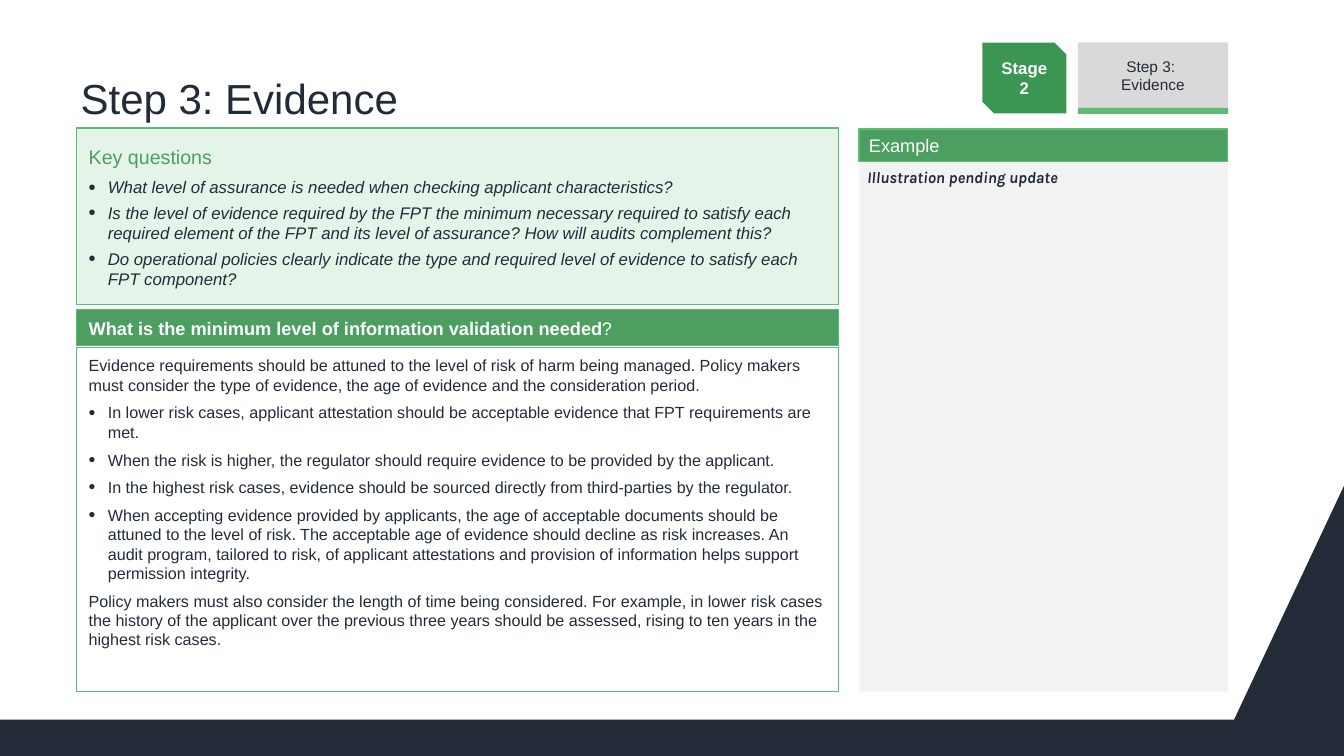
from dataclasses import dataclass

import pptx
import pptx.dml.color
import pptx.enum.shapes
import pptx.enum.text
import pptx.util
from lxml import etree
from pptx.util import Inches

SHAPE = pptx.enum.shapes.MSO_SHAPE
ALIGN = pptx.enum.text.PP_ALIGN
ANCHOR = pptx.enum.text.MSO_ANCHOR
NS = "http://schemas.openxmlformats.org/drawingml/2006/main"


@dataclass(frozen=True)
class Theme:
    navy: str = "232B39"
    white: str = "FFFFFF"
    green: str = "4C9E61"
    deep: str = "3C9653"
    bright: str = "5BBD74"
    mint: str = "E5F4E9"
    pale: str = "F2F2F2"
    gray: str = "D9D9D9"
    font: str = "Arial"
    accent: str = "Karla"
    title: float = 30
    head: float = 14
    bar: float = 13
    quest: float = 12
    body: float = 11.5
    tag: float = 11


THEME = Theme()
LEFT, WIDE = 0.76, 7.56
SIDE, SLIM = 8.52, 3.66
PAD = (0.12, 0.08, 0.12, 0.08)

ASKS = [
    "What level of assurance is needed when checking applicant characteristics?",
    "Is the level of evidence required by the FPT the minimum necessary required to satisfy each "
    "required element of the FPT and its level of assurance? How will audits complement this?",
    "Do operational policies clearly indicate the type and required level of evidence to satisfy "
    "each FPT component?",
]
INTRO = (
    "Evidence requirements should be attuned to the level of risk of harm being managed. Policy "
    "makers must consider the type of evidence, the age of evidence and the consideration period."
)
RULES = [
    "In lower risk cases, applicant attestation should be acceptable evidence that FPT "
    "requirements are met.",
    "When the risk is higher, the regulator should require evidence to be provided by the "
    "applicant.",
    "In the highest risk cases, evidence should be sourced directly from third-parties by the "
    "regulator.",
    "When accepting evidence provided by applicants, the age of acceptable documents should be "
    "attuned to the level of risk. The acceptable age of evidence should decline as risk "
    "increases. An audit program, tailored to risk, of applicant attestations and provision of "
    "information helps support permission integrity.",
]
CLOSE = (
    "Policy makers must also consider the length of time being considered. For example, in lower "
    "risk cases the history of the applicant over the previous three years should be assessed, "
    "rising to ten years in the highest risk cases."
)


def tint(code):
    return pptx.dml.color.RGBColor.from_string(code)


def paint(shape, fill, line=None, width=1):
    shape.shadow.inherit = False
    shape.fill.solid()
    shape.fill.fore_color.rgb = tint(fill)
    if line:
        shape.line.color.rgb = tint(line)
        shape.line.width = pptx.util.Pt(width)
    else:
        shape.line.fill.background()


def frame(shape, pad, anchor):
    text = shape.text_frame
    text.word_wrap = True
    text.auto_size = pptx.enum.text.MSO_AUTO_SIZE.NONE
    text.vertical_anchor = anchor
    text.margin_left, text.margin_top, text.margin_right, text.margin_bottom = map(Inches, pad)


def box(slide, place, fill, line=None, width=1, kind=SHAPE.RECTANGLE,
        pad=(0.1, 0.05, 0.1, 0.05), anchor=ANCHOR.MIDDLE):
    shape = slide.shapes.add_shape(kind, *map(Inches, place))
    paint(shape, fill, line, width)
    frame(shape, pad, anchor)
    return shape


def bullet(para):
    props = para._p.get_or_add_pPr()
    props.set("marL", str(Inches(0.19)))
    props.set("indent", str(-Inches(0.19)))
    etree.SubElement(props, f"{{{NS}}}buSzPct", val="120000")
    etree.SubElement(props, f"{{{NS}}}buFont", typeface=THEME.font)
    etree.SubElement(props, f"{{{NS}}}buChar", char="•")


def write(shape, text, size, color, bold=None, slant=None, align=ALIGN.LEFT,
          after=0, lead=None, dot=False, face=THEME.font):
    body = shape.text_frame
    para = body.add_paragraph() if body.text else body.paragraphs[0]
    para.text = text
    if dot:
        bullet(para)
    para.alignment = align
    para.space_after = pptx.util.Pt(after)
    para.line_spacing = lead
    font = para.font
    font.name, font.size = face, pptx.util.Pt(size)
    font.bold, font.italic = bold, slant
    font.color.rgb = tint(color)
    return para


def title(slide):
    shape = slide.shapes.title
    shape.left, shape.top = Inches(LEFT), Inches(0.15)
    shape.width, shape.height = Inches(11.43), Inches(1.13)
    frame(shape, (0.04, 0.05, 0.04, 0.05), ANCHOR.BOTTOM)
    write(shape, "Step 3: Evidence", THEME.title, THEME.navy, lead=0.9)


def footer(slide):
    edge = [(0, 7.14), (0, 7.5), (13.33, 7.5), (13.33, 4.82)]
    build = slide.shapes.build_freeform(Inches(12.24), Inches(7.14))
    build.add_line_segments([(Inches(x), Inches(y)) for x, y in edge])
    paint(build.convert_to_shape(), THEME.navy)


def tags(slide):
    stage = box(slide, (9.73, 0.41, 0.86, 0.73), THEME.deep, THEME.white, 2,
                SHAPE.SNIP_2_DIAG_RECTANGLE)
    write(stage, "Stage 2", THEME.quest, THEME.white, bold=True, align=ALIGN.CENTER)
    step = box(slide, (10.69, 0.42, 1.49, 0.65), THEME.gray)
    write(step, "Step 3: \nEvidence", THEME.tag, THEME.navy, align=ALIGN.CENTER)
    box(slide, (10.69, 1.07, 1.49, 0.06), THEME.bright)


def sample(slide):
    panel = box(slide, (SIDE, 1.58, SLIM, 5.28), THEME.pale, pad=(0.08,) * 4, anchor=ANCHOR.TOP)
    write(panel, "Illustration pending update", THEME.body, THEME.navy, bold=True, slant=True,
          face=THEME.accent)
    bar = box(slide, (SIDE, 1.28, SLIM, 0.32), THEME.green, THEME.bright, 0.75)
    write(bar, "Example", THEME.bar, THEME.white)


def detail(slide):
    bar = box(slide, (LEFT, 3.07, WIDE, 0.36), THEME.green, THEME.bright,
              pad=(0.12, 0.08, 0.12, 0.04))
    para = write(bar, "What is the minimum level of information validation needed",
                 THEME.bar, THEME.white, lead=0.9)
    para.runs[0].font.bold = True
    mark = para.add_run()
    mark.text = "?"
    mark.font.bold = False
    panel = box(slide, (LEFT, 3.45, WIDE, 3.41), THEME.white, THEME.bright, pad=PAD,
                anchor=ANCHOR.TOP)
    for text in [INTRO, *RULES, CLOSE]:
        write(panel, text, THEME.body, THEME.navy, after=6, dot=text in RULES)


def queries(slide):
    panel = box(slide, (LEFT, 1.27, WIDE, 1.75), THEME.mint, THEME.bright, pad=PAD)
    write(panel, "Key questions", THEME.head, THEME.green, after=6, lead=1.07)
    for text in ASKS:
        write(panel, text, THEME.quest, THEME.navy, slant=True, after=4, dot=True)


def main():
    deck = pptx.Presentation()
    deck.slide_width, deck.slide_height = Inches(13.33), Inches(7.5)
    slide = deck.slides.add_slide(deck.slide_layouts[5])
    footer(slide)
    title(slide)
    sample(slide)
    detail(slide)
    tags(slide)
    queries(slide)
    deck.save("out.pptx")


if __name__ == "__main__":
    main()
